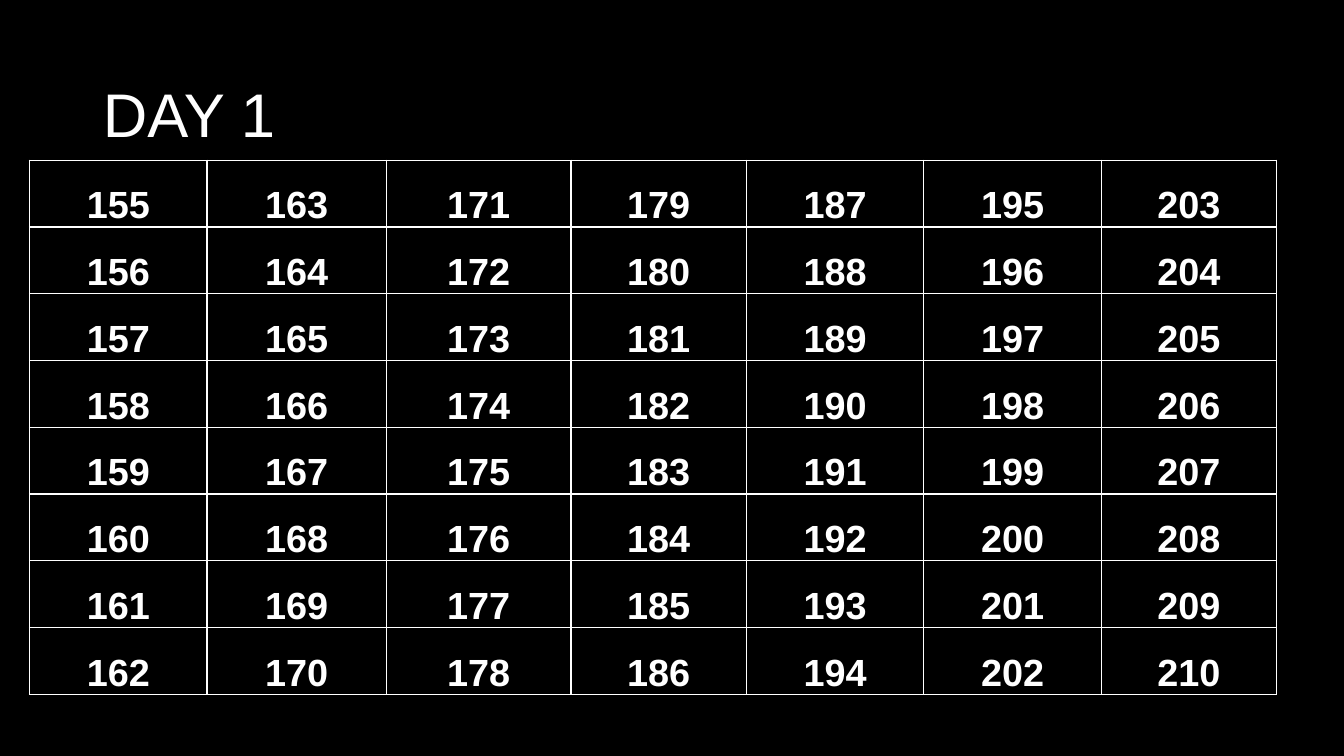
from lxml.etree import SubElement as Sub
from pptx import Presentation as Deck
from pptx.dml.color import RGBColor as RGB
from pptx.enum.text import MSO_ANCHOR as Anchor, PP_ALIGN as Align
from pptx.oxml.ns import qn
from pptx.util import Inches, Pt

WHITE = RGB(0xFF, 0xFF, 0xFF)
BLACK = RGB(0, 0, 0)
FONT = "Arial"
WIDE, HIGH = Inches(13.33), Inches(7.5)
FIRST, ROWS = 155, 8
COLS = [1.76, 1.78, 1.83, 1.74, 1.76, 1.76, 1.74]
ROW = 5.3 / ROWS


def style(para, size, bold):
    for run in para.runs:
        font = run.font
        font.name, font.size, font.bold = FONT, Pt(size), bold
        font.color.rgb = WHITE


def add_title(slide, text):
    title = slide.shapes.title
    title.left, title.top = int(WIDE * 0.069), int(HIGH * 0.053)
    title.width, title.height = int(WIDE * 0.863), int(HIGH * 0.193)
    frame = title.text_frame
    frame.text = text
    frame.vertical_anchor = Anchor.MIDDLE
    para = frame.paragraphs[0]
    para.alignment = Align.LEFT
    style(para, 44, False)


def add_edges(cell):
    props = cell._tc.get_or_add_tcPr()
    for side in ("lnL", "lnR", "lnT", "lnB"):
        line = Sub(props, qn(f"a:{side}"), w=str(Pt(1)))
        fill = Sub(line, qn("a:solidFill"))
        Sub(fill, qn("a:srgbClr"), val=str(WHITE))


def fill_cell(cell, text):
    add_edges(cell)
    cell.fill.solid()
    cell.fill.fore_color.rgb = BLACK
    cell.vertical_anchor = Anchor.BOTTOM
    cell.margin_left = cell.margin_right = cell.margin_top = Inches(0.01)
    cell.margin_bottom = 0
    cell.text_frame.text = text
    para = cell.text_frame.paragraphs[0]
    para.alignment = Align.CENTER
    para.line_spacing = 1.19
    para.space_after = Pt(14)
    style(para, 27, True)


def add_grid(slide):
    frame = slide.shapes.add_table(
        ROWS, len(COLS), int(WIDE * 0.022), int(HIGH * 0.212),
        Inches(sum(COLS)), Inches(ROW * ROWS))
    table = frame.table
    table.first_row = table.horz_banding = False
    for row in table.rows:
        row.height = Inches(ROW)
    for c, width in enumerate(COLS):
        table.columns[c].width = Inches(width)
        for r in range(ROWS):
            fill_cell(table.cell(r, c), str(FIRST + c * ROWS + r))


def main():
    deck = Deck()
    deck.slide_width, deck.slide_height = WIDE, HIGH
    slide = deck.slides.add_slide(deck.slide_layouts[5])
    back = slide.background.fill
    back.solid()
    back.fore_color.rgb = BLACK
    add_title(slide, "DAY 1")
    add_grid(slide)
    deck.save("out.pptx")


if __name__ == "__main__":
    main()
